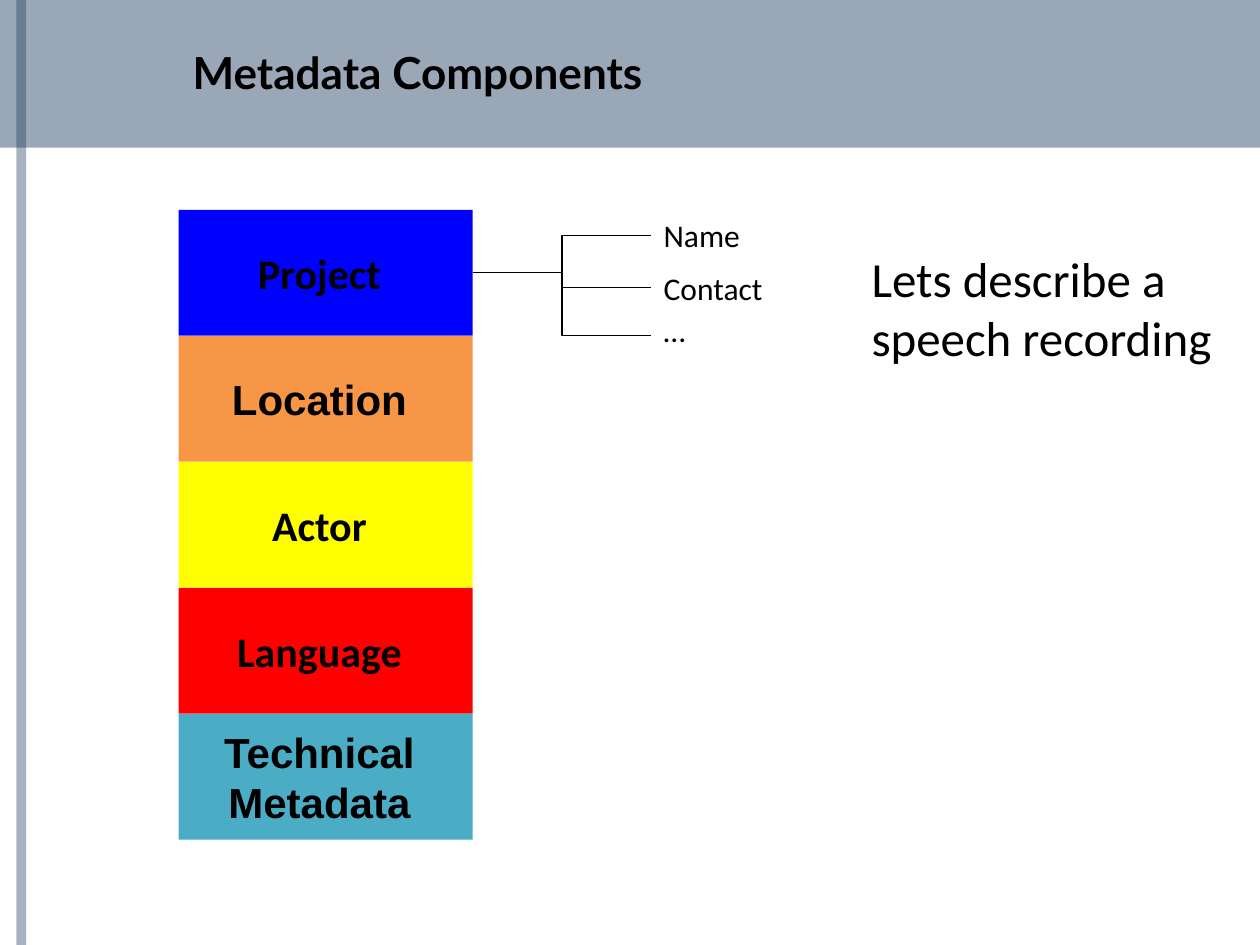
import lxml.etree
import pptx
import pptx.dml.color
import pptx.enum.shapes
import pptx.enum.text
import pptx.oxml.ns
import pptx.util

Cm = pptx.util.Cm
Pt = pptx.util.Pt
qn = pptx.oxml.ns.qn
RECTANGLE = pptx.enum.shapes.MSO_SHAPE.RECTANGLE
MIDDLE = pptx.enum.text.MSO_ANCHOR.MIDDLE


def color(hex_string):
    return pptx.dml.color.RGBColor.from_string(hex_string)


def write(frame, lines, font, size, bold=False, align=None):
    frame.text = "\n".join(lines)
    for para in frame.paragraphs:
        para.alignment = align
        para.font.name = font
        para.font.size = Pt(size)
        para.font.bold = bold
        para.font.color.rgb = color("000000")


deck = pptx.Presentation()
deck.slide_width = Cm(25.4)
deck.slide_height = Cm(19.05)
page = deck.slides.add_slide(deck.slide_layouts[5])
shapes = page.shapes

bands = [(0, 25.4, 2.98, 46), (0.33, 0.2, 19.05, 40)]
for left, width, height, opacity in bands:
    band = shapes.add_shape(RECTANGLE, Cm(left), 0, Cm(width), Cm(height))
    band.shadow.inherit = False
    band.line.fill.background()
    band.fill.solid()
    band.fill.fore_color.rgb = color("254061")
    tint = band.element.spPr.find(".//" + qn("a:srgbClr"))
    lxml.etree.SubElement(tint, qn("a:alpha"), val=str(opacity * 1000))

title = shapes.title
title.element.getparent().append(title.element)
title.left, title.top, title.width, title.height = Cm(3.63), Cm(0.76), Cm(17.81), Cm(1.37)
write(title.text_frame, ["Metadata Components"], "Lato", 25.2, True,
      pptx.enum.text.PP_ALIGN.LEFT)
title.text_frame.vertical_anchor = MIDDLE

components = [
    (["Project"], "0000FF", "Calibri"),
    (["Location"], "F79646", "Arial"),
    (["Actor"], "FFFF00", "Calibri"),
    (["Language"], "FF0000", "Calibri"),
    (["Technical", "Metadata"], "4BACC6", "Arial"),
]
component_boxes = []
for row, (lines, fill, font) in enumerate(components):
    box = shapes.add_shape(RECTANGLE, Cm(3.6), Cm(4.23 + row * 2.54), Cm(5.93), Cm(2.54))
    box.shadow.inherit = False
    box.line.fill.background()
    box.fill.solid()
    box.fill.fore_color.rgb = color(fill)
    box.text_frame.margin_left = 0
    box.text_frame.vertical_anchor = MIDDLE
    write(box.text_frame, lines, font, 24, True, pptx.enum.text.PP_ALIGN.CENTER)
    component_boxes.append(box)
project = component_boxes[0]

notes = [
    (["Name"], 13.13, 4.23, 2.24, 1.02, 18),
    (["Contact"], 13.13, 5.29, 2.72, 1.02, 18),
    (["…"], 13.13, 6.14, 1.14, 1.02, 18),
    (["Lets describe a", "speech recording"], 17.32, 4.88, 8.15, 2.64, 28),
]
for lines, left, top, width, height, size in notes:
    box = shapes.add_textbox(Cm(left), Cm(top), Cm(width), Cm(height))
    box.text_frame.word_wrap = False
    box.text_frame.auto_size = pptx.enum.text.MSO_AUTO_SIZE.SHAPE_TO_FIT_TEXT
    write(box.text_frame, lines, "Calibri", size)

for end_y in (4.75, 5.8, 6.77):
    branch = shapes.add_connector(pptx.enum.shapes.MSO_CONNECTOR.ELBOW,
                                  Cm(9.53), Cm(5.5), Cm(13.13), Cm(end_y))
    branch.begin_connect(project, 3)
    branch.line.color.rgb = color("000000")
    branch.line.width = Pt(0.75)
    lxml.etree.SubElement(branch.element.spPr, qn("a:effectLst"))

deck.save("out.pptx")
